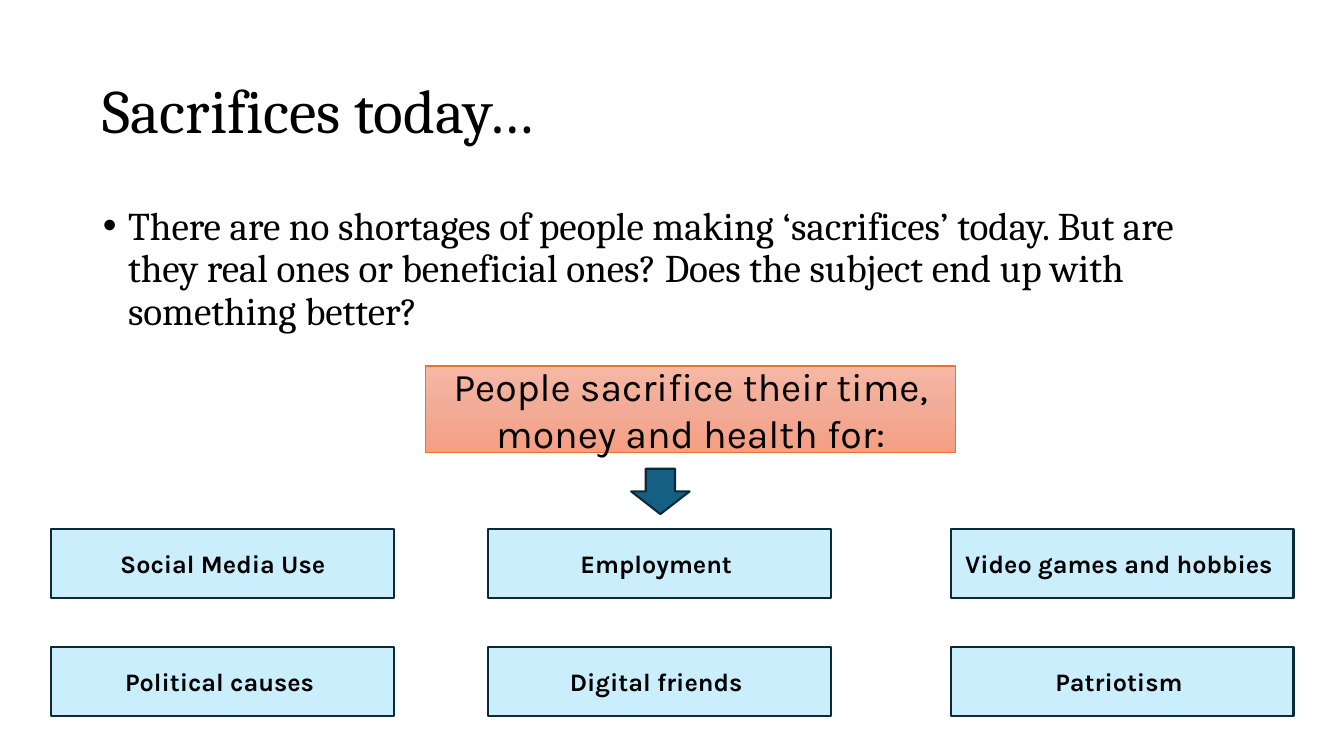
from copy import deepcopy
from dataclasses import dataclass

from pptx import Presentation
from pptx.dml.color import RGBColor
from pptx.enum.shapes import MSO_SHAPE
from pptx.enum.text import MSO_ANCHOR, MSO_AUTO_SIZE, PP_ALIGN
from pptx.oxml.ns import qn
from pptx.util import Inches, Pt


@dataclass(frozen=True)
class Theme:
    serif: str = "Cambria"
    sans: str = "Karla"
    ink: str = "000000"
    box: str = "CAEEFB"
    edge: str = "092A39"
    arrow: str = "156082"
    rim: str = "E97132"
    blend: tuple = ("F5B8A5", "F2AB96", "F59E82")
    title: int = 44
    body: int = 28
    label: int = 18


THEME = Theme()
CAUSES = [
    ["Social Media Use", "Employment ", "Video games and hobbies "],
    ["Political causes ", "Digital friends ", "Patriotism "],
]
LEFTS = (0.51, 4.84, 9.43)
TOP, STEP = 5.25, 1.17


def apply(item, values):
    for name, value in values.items():
        setattr(item, name, value)


def place(shape, left, top, width, height):
    apply(shape, {"left": Inches(left), "top": Inches(top),
                  "width": Inches(width), "height": Inches(height)})


def write(shape, text, face, size, anchor, para, bold=False):
    frame = shape.text_frame
    frame.text = text
    apply(frame, {"word_wrap": True, "auto_size": MSO_AUTO_SIZE.NONE,
                  "vertical_anchor": anchor})
    line = frame.paragraphs[0]
    apply(line, para)
    font = line.runs[0].font
    apply(font, {"name": face, "size": Pt(size), "bold": bold})
    font.color.rgb = RGBColor.from_string(THEME.ink)
    return line


def add_block(slide, kind, area, fill, edge, width):
    shape = slide.shapes.add_shape(kind, *map(Inches, area))
    shape.shadow.inherit = False
    if fill:
        shape.fill.solid()
        shape.fill.fore_color.rgb = RGBColor.from_string(fill)
    shape.line.color.rgb = RGBColor.from_string(edge)
    shape.line.width = Pt(width)
    return shape


def label(shape, text, size, bold=False):
    write(shape, text, THEME.sans, size, MSO_ANCHOR.MIDDLE,
          {"alignment": PP_ALIGN.CENTER}, bold)


def shade(shape, colors):
    fill = shape.fill
    fill.gradient()
    fill.gradient_angle = 270
    # Add a middle stop to the two default ones
    stops = shape._element.spPr.find(qn("a:gradFill")).find(qn("a:gsLst"))
    stops.insert(1, deepcopy(stops[0]))
    for stop, color, spot in zip(fill.gradient_stops, colors, (0, 0.5, 1)):
        stop.color.rgb = RGBColor.from_string(color)
        stop.position = spot


def add_intro(slide):
    title, body = slide.placeholders
    place(title, 0.92, 0.4, 11.5, 1.45)
    place(body, 0.92, 2, 11.5, 1.45)
    para = {"alignment": PP_ALIGN.LEFT, "line_spacing": 0.9}
    write(title, "Sacrifices today…", THEME.serif, THEME.title,
          MSO_ANCHOR.MIDDLE, para)
    line = write(
        body,
        "There are no shortages of people making ‘sacrifices’ today. "
        "But are they real ones or beneficial ones? "
        "Does the subject end up with something better?",
        THEME.serif, THEME.body, MSO_ANCHOR.TOP,
        {**para, "space_before": Pt(10)})
    # Hanging bullet
    props = line._p.get_or_add_pPr()
    props.set("marL", str(Inches(0.25)))
    props.set("indent", str(Inches(-0.25)))


def main():
    deck = Presentation()
    apply(deck, {"slide_width": Inches(13.33), "slide_height": Inches(7.5)})
    slide = deck.slides.add_slide(deck.slide_layouts[1])
    add_intro(slide)

    # Lead box and arrow
    lead = add_block(slide, MSO_SHAPE.RECTANGLE, (4.22, 3.63, 5.26, 0.86),
                     None, THEME.rim, 1)
    shade(lead, THEME.blend)
    label(lead, "People sacrifice their time, money and health for:",
          THEME.body)
    add_block(slide, MSO_SHAPE.DOWN_ARROW, (6.26, 4.65, 0.58, 0.45),
              THEME.arrow, THEME.edge, 1.5)

    # Grid of causes
    for row, names in enumerate(CAUSES):
        for left, name in zip(LEFTS, names):
            box = add_block(slide, MSO_SHAPE.RECTANGLE,
                            (left, TOP + row * STEP, 3.4, 0.68),
                            THEME.box, THEME.edge, 1.5)
            label(box, name, THEME.label, True)

    deck.save("out.pptx")


if __name__ == "__main__":
    main()
